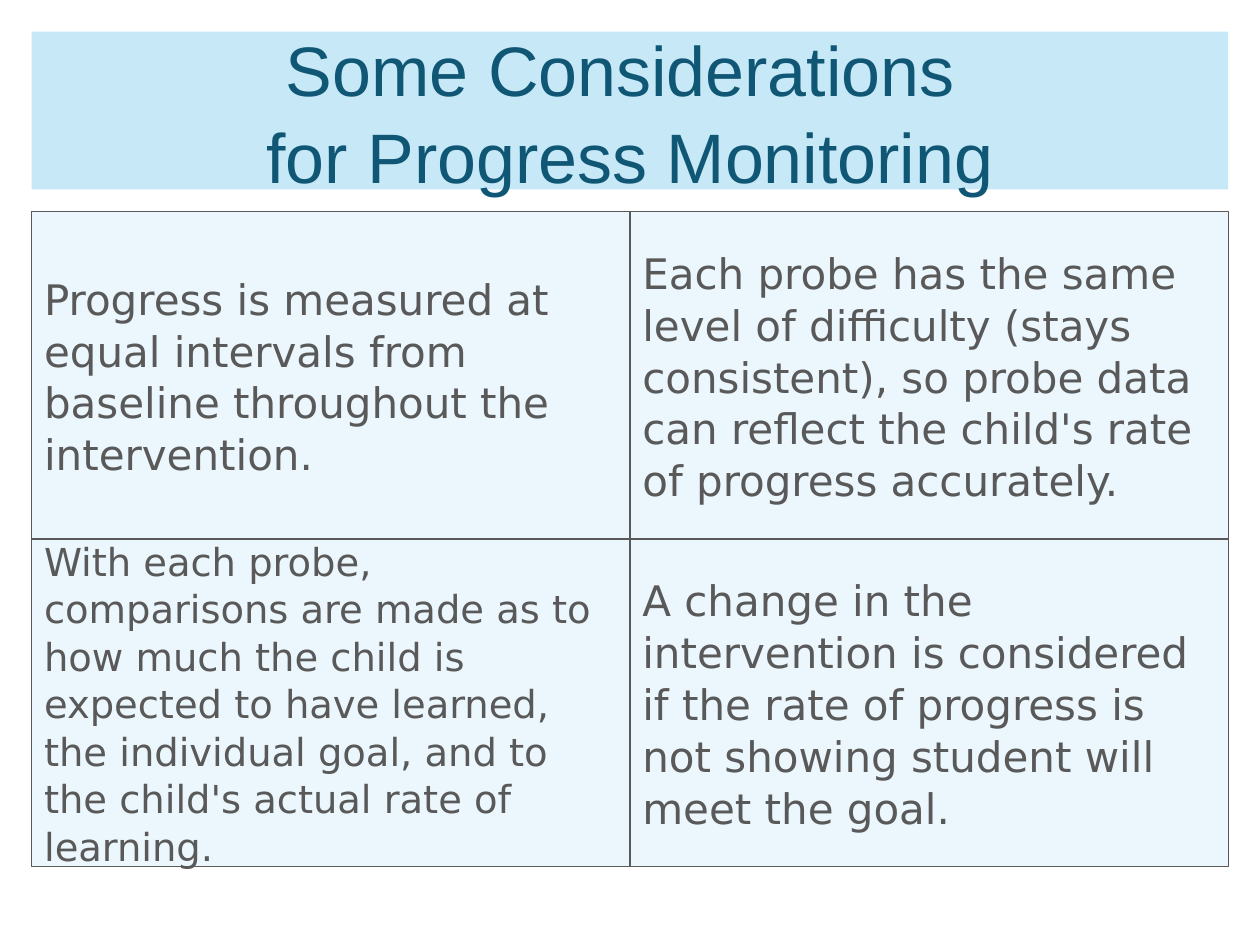
from lxml.etree import SubElement
from pptx import Presentation
from pptx.dml.color import RGBColor
from pptx.enum.shapes import MSO_SHAPE
from pptx.enum.text import MSO_ANCHOR, MSO_AUTO_SIZE, PP_ALIGN
from pptx.oxml.ns import qn
from pptx.util import Cm, Pt

TITLE = "Some Considerations \nfor Progress Monitoring"
CONSIDERATIONS = [
    ("Progress is measured at equal intervals from baseline throughout the intervention.", 24),
    ("Each probe has the same level of difficulty (stays consistent), so probe data "
     "can reflect the child's rate of progress accurately.", 24),
    ("With each probe, comparisons are made as to how much the child is expected to have "
     "learned, the individual goal, and to the child's actual rate of learning.", 22),
    ("A change in the intervention is considered if the rate of progress is not showing "
     "student will meet the goal.", 24),
]


def color(hex_value):
    """Return the colour for a hex string."""
    return RGBColor.from_string(hex_value)


def tint(panel, hex_value, opacity=65):
    """Fill a panel with a partly transparent colour."""
    panel.fill.solid()
    panel.fill.fore_color.rgb = color(hex_value)
    srgb = panel.fill._xPr.find(qn("a:solidFill")).find(qn("a:srgbClr"))
    SubElement(srgb, qn("a:alpha")).set("val", str(opacity * 1000))


def write(panel, wording, size, font, hex_value, align, margin, before, spacing):
    """Write and format the wording of a panel."""
    frame = panel.text_frame
    frame.text = wording
    frame.word_wrap = True
    frame.auto_size = MSO_AUTO_SIZE.NONE
    frame.vertical_anchor = MSO_ANCHOR.MIDDLE
    frame.margin_left = frame.margin_right = Cm(0.25)
    frame.margin_top = frame.margin_bottom = margin
    for paragraph in frame.paragraphs:
        paragraph.alignment = align
        paragraph.space_before = Pt(before)
        paragraph.line_spacing = spacing
        for run in paragraph.runs:
            run.font.size = Pt(size)
            run.font.name = font
            run.font.color.rgb = color(hex_value)


def add_heading(slide, left, top, width, height):
    """Place the title placeholder as a tinted band."""
    heading = slide.shapes.title
    heading.left, heading.top, heading.width, heading.height = left, top, width, height
    tint(heading, "A9DCF2")
    write(heading, TITLE, 40, "Arial", "105775", PP_ALIGN.CENTER, Cm(0.13), 0, 1.04)


def add_considerations(slide, left, top, width, height, columns=2):
    """Lay the considerations out as a grid of bordered panels."""
    panel_width = width // columns
    panel_height = height // (len(CONSIDERATIONS) // columns)
    for index, (wording, size) in enumerate(CONSIDERATIONS):
        row, column = divmod(index, columns)
        panel = slide.shapes.add_shape(
            MSO_SHAPE.RECTANGLE, left + column * panel_width, top + row * panel_height,
            panel_width, panel_height)
        panel.shadow.inherit = False
        tint(panel, "E1F4FC")
        panel.line.color.rgb = color("595959")
        panel.line.width = Pt(0.75)
        write(panel, wording, size, "DejaVu Sans", "595959", PP_ALIGN.LEFT, Cm(0.25), 3.6, 1.03)


def main():
    """Build and save the slide."""
    deck = Presentation()
    deck.slide_width, deck.slide_height = Cm(25.4), Cm(19.05)
    slide = deck.slides.add_slide(deck.slide_layouts.get_by_name("Title Only"))
    margin = Cm(0.64)
    width = deck.slide_width - 2 * margin
    add_heading(slide, margin, margin, width, Cm(3.18))
    add_considerations(slide, margin, Cm(4.27), width, Cm(13.2))
    deck.save("out.pptx")


if __name__ == "__main__":
    main()
